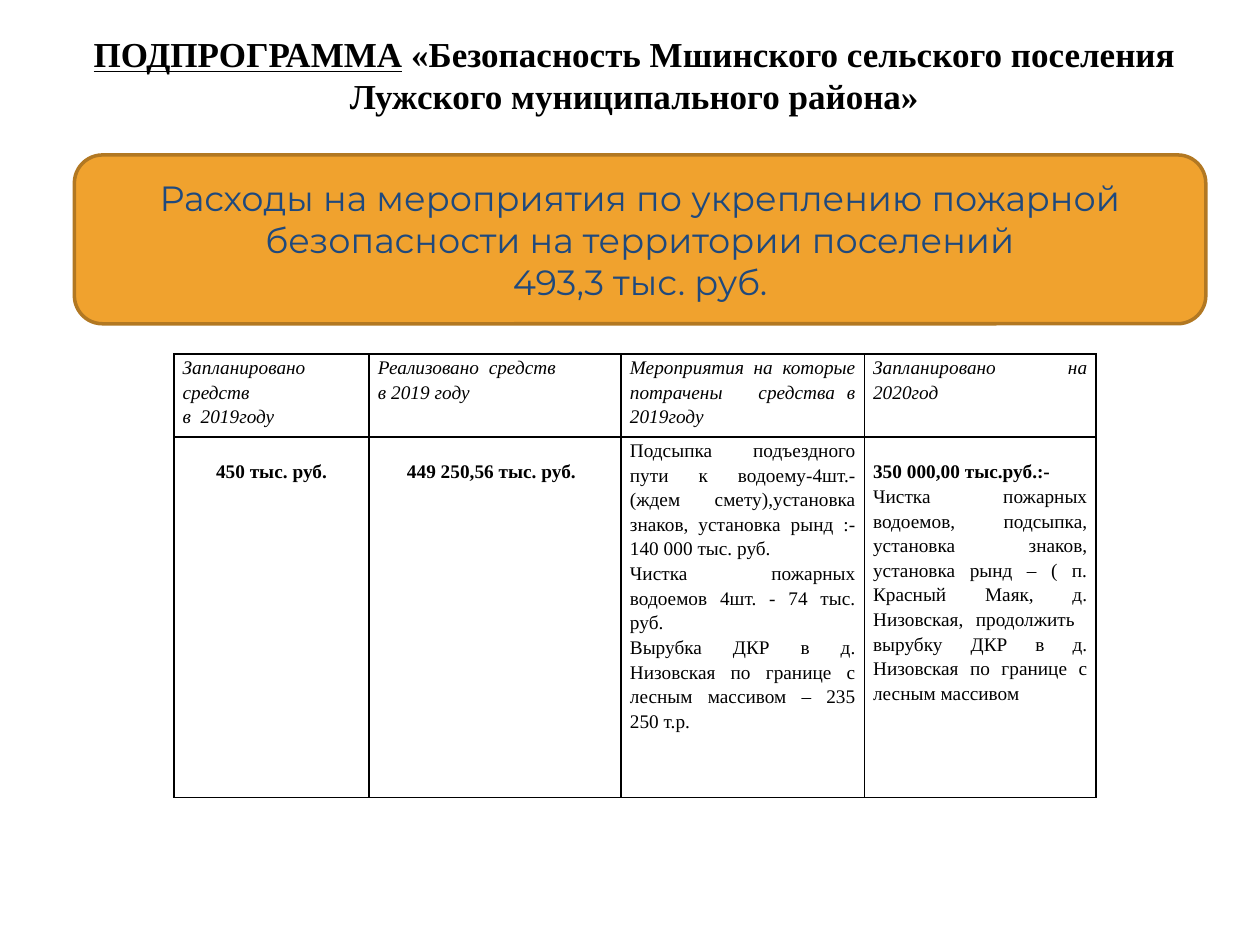
from dataclasses import dataclass

from lxml import etree
from pptx import Presentation, util as u
from pptx.dml.color import RGBColor
from pptx.enum import shapes, text
from pptx.oxml.ns import qn

CENTER, JUST = text.PP_ALIGN.CENTER, text.PP_ALIGN.JUSTIFY


@dataclass(frozen=True)
class Theme:
    serif: str = "Times New Roman"
    sans: str = "Montserrat"
    ink: str = "000000"
    blue: str = "1F497D"
    gold: str = "F0A22E"
    edge: str = "B27822"
    head: int = 20
    body: int = 11


THEME = Theme()


def rgb(code):
    return RGBColor.from_string(code)


def add_run(para, words, face, size, color, **style):
    run = para.add_run()
    run.text = words
    font = run.font
    font.name, font.size = face, u.Pt(size)
    font.color.rgb = rgb(color)
    for key, value in style.items():
        setattr(font, key, value)


def next_para(frame, index, align):
    para = frame.paragraphs[0] if index == 0 else frame.add_paragraph()
    para.alignment = align
    return para


def add_title(slide, parts):
    box = slide.shapes.add_textbox(
        u.Inches(0.27), u.Inches(0.21), u.Inches(9.53), u.Inches(0.77))
    box.text_frame.word_wrap = True
    para = next_para(box.text_frame, 0, CENTER)
    for words, under in parts:
        add_run(para, words, THEME.serif, THEME.head, THEME.ink,
                bold=True, underline=under)


def add_panel(slide, lines):
    panel = slide.shapes.add_shape(
        shapes.MSO_SHAPE.ROUNDED_RECTANGLE,
        u.Inches(0.59), u.Inches(1.23), u.Inches(8.98), u.Inches(1.34))
    panel.shadow.inherit = False
    panel.fill.solid()
    panel.fill.fore_color.rgb = rgb(THEME.gold)
    panel.line.color.rgb = rgb(THEME.edge)
    panel.line.width = u.Pt(2)
    frame = panel.text_frame
    frame.word_wrap = True
    frame.vertical_anchor = text.MSO_ANCHOR.MIDDLE
    for index, words in enumerate(lines):
        para = next_para(frame, index, CENTER)
        add_run(para, words, THEME.sans, THEME.head, THEME.blue)


def set_edges(cell):
    props = cell._tc.get_or_add_tcPr()
    for place, side in enumerate(("lnL", "lnR", "lnT", "lnB")):
        line = etree.Element(qn("a:" + side), w=str(u.Pt(1)))
        fill = etree.SubElement(line, qn("a:solidFill"))
        etree.SubElement(fill, qn("a:srgbClr"), val=THEME.ink)
        props.insert(place, line)


def fill_cell(cell, lines, align=JUST, top=0, left=0.07):
    cell.fill.background()
    set_edges(cell)
    cell.margin_left, cell.margin_right = u.Inches(left), u.Inches(0.07)
    cell.margin_top, cell.margin_bottom = u.Inches(top), 0
    for index, (words, style) in enumerate(lines):
        para = next_para(cell.text_frame, index, align)
        para.line_spacing = 1.15
        add_run(para, words, THEME.serif, THEME.body, THEME.ink, **style)


def add_grid(slide, rows, widths, heights):
    frame = slide.shapes.add_table(
        len(rows), len(widths), u.Inches(1.38), u.Inches(2.81),
        u.Inches(sum(widths)), u.Inches(sum(heights)))
    table = frame.table
    table.first_row = table.horz_banding = False
    for col, width in zip(table.columns, widths):
        col.width = u.Inches(width)
    for row, height, cells in zip(table.rows, heights, rows):
        row.height = u.Inches(height)
        for cell, content in zip(row.cells, cells):
            fill_cell(cell, **content)


def main():
    deck = Presentation()
    deck.slide_width, deck.slide_height = u.Inches(10), u.Inches(7.5)
    slide = deck.slides.add_slide(deck.slide_layouts[6])

    # Heading and total
    add_title(slide, [
        ("ПОДПРОГРАММА", True),
        (" «Безопасность Мшинского сельского поселения "
         "Лужского муниципального района»", False)])
    add_panel(slide, [
        "Расходы на мероприятия по укреплению пожарной "
        "безопасности на территории поселений",
        "493,3 тыс. руб."])

    # Plan and spending
    plain, bold, slant = {}, {"bold": True}, {"italic": True}
    heads = [
        ["Запланировано средств", "в  2019году"],
        ["Реализовано  средств", "в 2019 году"],
        ["Мероприятия на которые потрачены   средства в 2019году"],
        ["Запланировано на 2020год"]]
    top_row = [{"lines": [(words, slant) for words in head]} for head in heads]
    drop = 0.17
    sums = [
        {"lines": [("450 тыс. руб.", bold)], "align": CENTER, "top": drop},
        {"lines": [("449 250,56 тыс. руб.", bold)], "top": drop, "left": 0.3},
        {"lines": [
            ("Подсыпка подъездного пути к водоему-4шт.- (ждем смету),"
             "установка знаков, установка рынд :- 140 000 тыс. руб.", plain),
            ("Чистка пожарных водоемов 4шт. - 74 тыс. руб.", plain),
            ("Вырубка ДКР в д. Низовская по границе с лесным массивом "
             "– 235 250 т.р.", plain)]},
        {"lines": [
            ("350 000,00 тыс.руб.:-", bold),
            ("Чистка пожарных водоемов, подсыпка, установка знаков, "
             "установка рынд – ( п. Красный Маяк, д. Низовская, продолжить  "
             "вырубку ДКР в д. Низовская по границе с лесным массивом",
             plain)], "top": drop}]
    add_grid(slide, [top_row, sums], [1.55, 2, 1.93, 1.84], [0.66, 2.86])

    deck.save("out.pptx")


if __name__ == "__main__":
    main()
